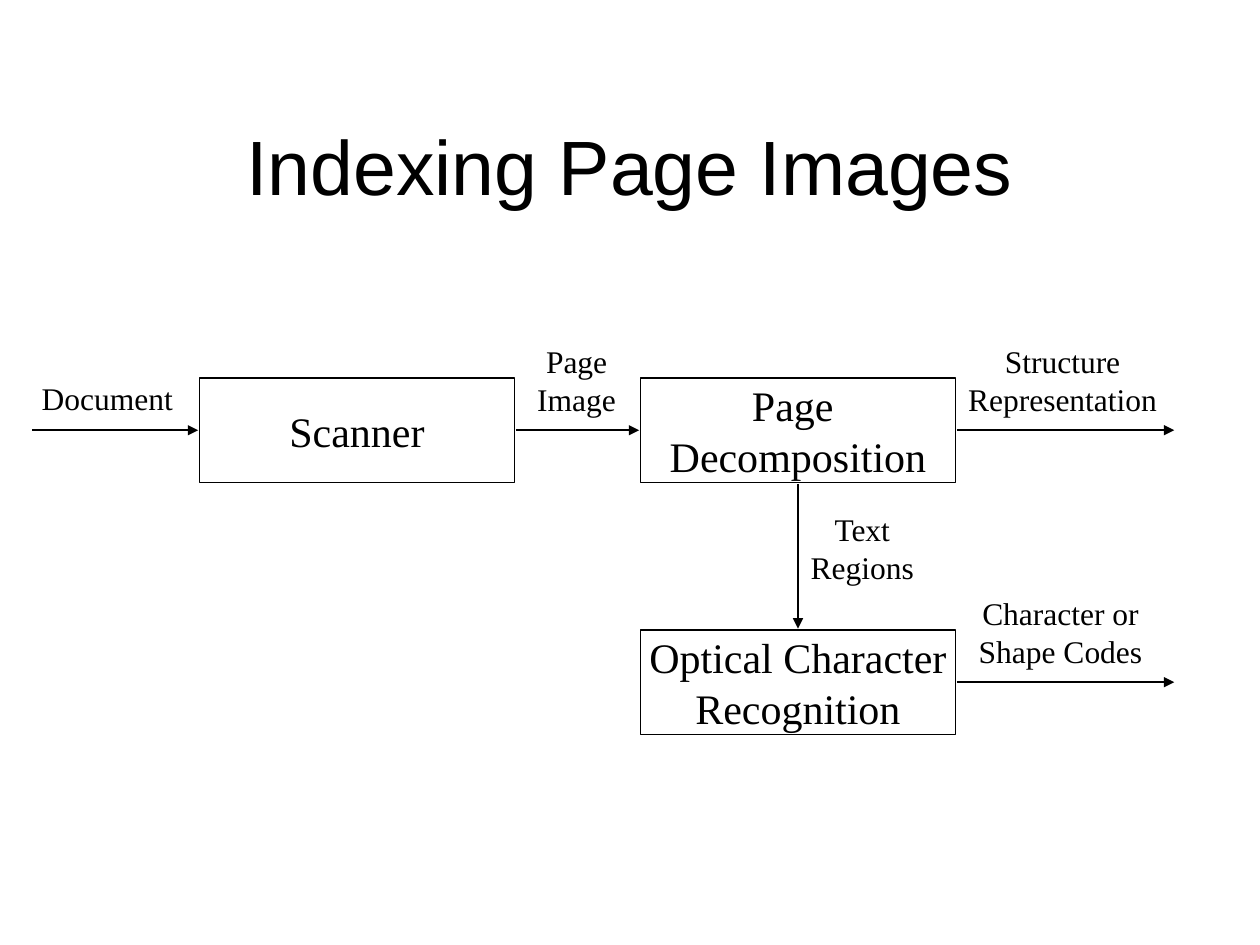
"""Build the page image indexing flow slide."""
from dataclasses import dataclass

from pptx import Presentation
from pptx.dml.color import RGBColor
from pptx.enum import shapes, text
from pptx.oxml import ns, xmlchemy as xml
from pptx.util import Pt

BLACK = RGBColor(0, 0, 0)
WIDE, HIGH = 180, 59.75
LEFT, RIGHT = 114, 366
TOP, LOW = 216, 360
MID = RIGHT + WIDE / 2
GAP = 0.75
END = 671


@dataclass
class Box:
    words: str
    x: float
    y: float


@dataclass
class Label:
    words: str
    x: float
    y: float
    w: float
    h: float = 50.5
    align: text.PP_ALIGN = text.PP_ALIGN.CENTER


@dataclass
class Arrow:
    x1: float
    y1: float
    x2: float
    y2: float


BOXES = [
    Box("Optical Character\nRecognition", RIGHT, LOW),
    Box("Page \nDecomposition", RIGHT, TOP),
    Box("Scanner", LEFT, TOP),
]
ROW1, ROW2 = TOP + HIGH / 2, LOW + HIGH / 2
ARROWS = [
    Arrow(18.5, ROW1, LEFT - GAP, ROW1),
    Arrow(LEFT + WIDE + GAP, ROW1, RIGHT - GAP, ROW1),
    Arrow(RIGHT + WIDE + GAP, ROW1, END, ROW1),
    Arrow(MID, TOP + HIGH + GAP, MID, LOW - GAP),
    Arrow(RIGHT + WIDE + GAP, ROW2, END, ROW2),
]
LABELS = [
    Label("Document", 16.75, 213, 90, 29, text.PP_ALIGN.LEFT),
    Label("Page\nImage", 298.5, 192, 62),
    Label("Structure\nRepresentation", 545, 192, 124.5),
    Label("Character or\nShape Codes", 551, 336, 110),
    Label("Text\nRegions", 455, 288, 75.5),
]


def write(shape, words: str, *, size: float, font: str = "Times New Roman",
          align=text.PP_ALIGN.CENTER, anchor=text.MSO_ANCHOR.MIDDLE,
          wrap: bool = False, fit=text.MSO_AUTO_SIZE.NONE) -> None:
    frame = shape.text_frame
    frame.text = words
    frame.word_wrap = wrap
    frame.auto_size = fit
    frame.vertical_anchor = anchor
    for para in frame.paragraphs:
        para.alignment = align
        para.font.size = Pt(size)
        para.font.name = font
        para.font.color.rgb = BLACK


def stroke(line) -> None:
    line.color.rgb = BLACK
    line.width = Pt(1)


def draw_box(slide, box: Box) -> None:
    rect = slide.shapes.add_shape(shapes.MSO_SHAPE.RECTANGLE, Pt(box.x),
                                  Pt(box.y), Pt(WIDE), Pt(HIGH))
    rect.shadow.inherit = False
    rect.fill.background()
    stroke(rect.line)
    write(rect, box.words, size=24)


def draw_arrow(slide, arrow: Arrow) -> None:
    link = slide.shapes.add_connector(
        shapes.MSO_CONNECTOR.STRAIGHT, Pt(arrow.x1), Pt(arrow.y1),
        Pt(arrow.x2), Pt(arrow.y2))
    stroke(link.line)
    tip = xml.OxmlElement("a:tailEnd")
    tip.set("type", "triangle")
    props = link._element.spPr
    props.find(ns.qn("a:ln")).append(tip)
    props.append(xml.OxmlElement("a:effectLst"))


def draw_label(slide, label: Label) -> None:
    area = slide.shapes.add_textbox(Pt(label.x), Pt(label.y),
                                    Pt(label.w), Pt(label.h))
    write(area, label.words, size=18, align=label.align,
          anchor=text.MSO_ANCHOR.TOP,
          fit=text.MSO_AUTO_SIZE.SHAPE_TO_FIT_TEXT)


def main() -> None:
    deck = Presentation()
    deck.slide_width, deck.slide_height = Pt(720), Pt(540)
    slide = deck.slides.add_slide(deck.slide_layouts[5])
    title = slide.shapes.title
    title.left, title.top = Pt(36), Pt(60)
    title.width, title.height = Pt(648), Pt(68.5)
    write(title, "Indexing Page Images", size=44, font="Arial", wrap=True)
    for box in BOXES:
        draw_box(slide, box)
    for arrow in ARROWS:
        draw_arrow(slide, arrow)
    for label in LABELS:
        draw_label(slide, label)
    deck.save("out.pptx")


if __name__ == "__main__":
    main()
